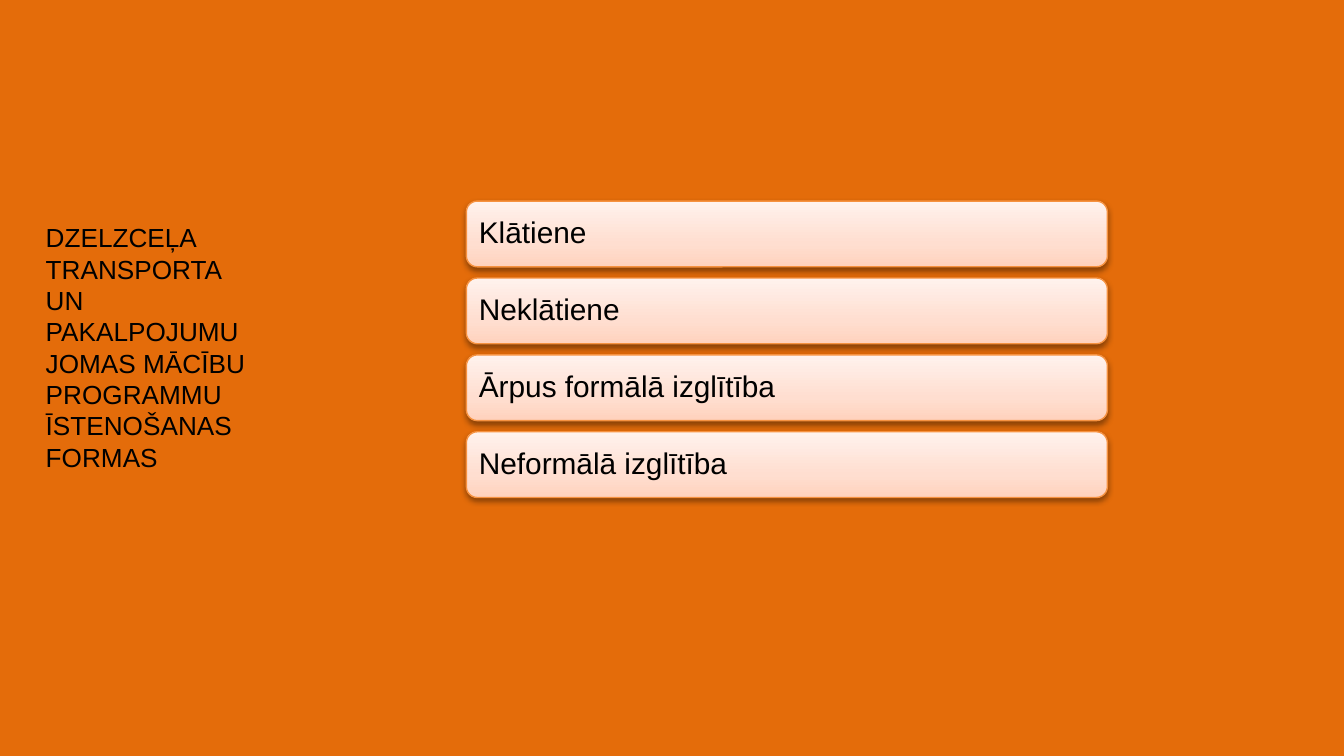
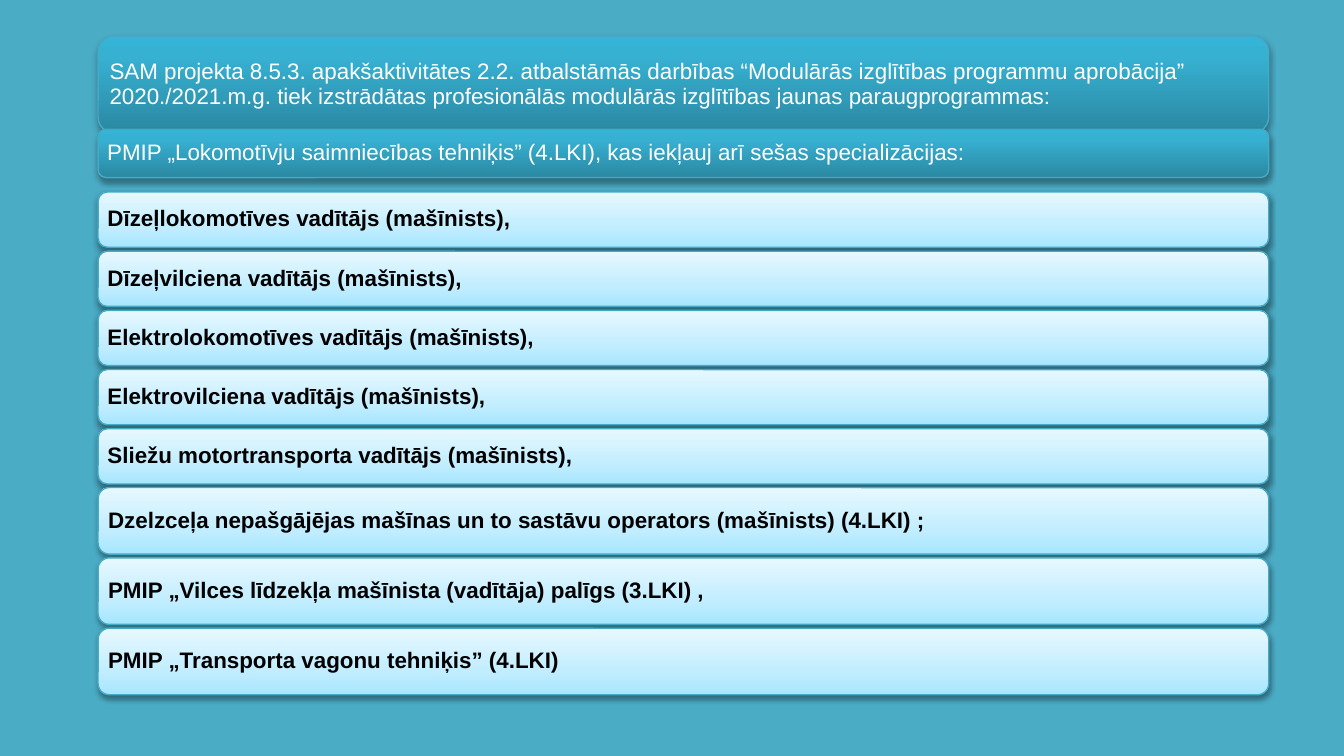
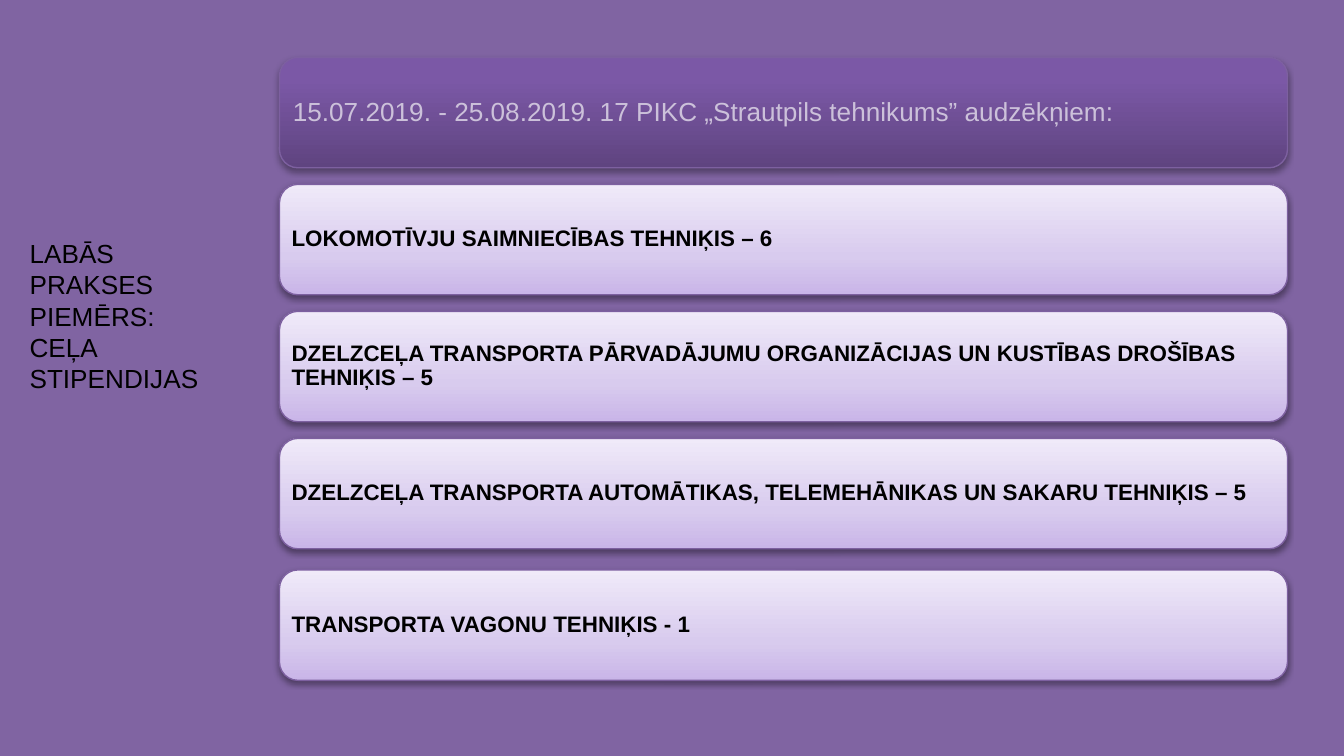
import copy
import pptx
import pptx.util
import pptx.dml.color
import pptx.enum.shapes
import pptx.enum.text
import pptx.oxml
import pptx.oxml.ns

Pt, Inches = pptx.util.Pt, pptx.util.Inches
LEFT = pptx.enum.text.PP_ALIGN.LEFT
MIDDLE = pptx.enum.text.MSO_ANCHOR.MIDDLE
ROUND = pptx.enum.shapes.MSO_SHAPE.ROUNDED_RECTANGLE
SIDES = ("margin_left", "margin_right", "margin_top", "margin_bottom")

deck = pptx.Presentation()
deck.slide_width, deck.slide_height = Inches(10), Inches(5.625)
COL, ROW = deck.slide_width / 100, deck.slide_height / 100


def rgb(code):
    return pptx.dml.color.RGBColor.from_string(code)


def write(frame, text, hue, frame_set, para_set, font_set):
    """Fill a text frame and apply the format values at each level."""
    frame.text = text
    base = {"word_wrap": True, "vertical_anchor": MIDDLE,
            "auto_size": pptx.enum.text.MSO_AUTO_SIZE.NONE}
    for key, val in {**base, **frame_set}.items():
        setattr(frame, key, val)
    for para in frame.paragraphs:
        for key, val in {"alignment": LEFT, **para_set}.items():
            setattr(para, key, val)
        for key, val in {"name": "Arial", **font_set}.items():
            setattr(para.font, key, val)
        para.font.color.rgb = rgb(hue)


# Each look: gradient stops from the bottom up, text colour, bold, shadow alpha and distance
def_stops = (0, 0.35, 1)
head_stops = (0, 0.8, 1)
soft = ("000000", 38, 1.6)
deep = (35, 1.8)
LOOKS = {
    "peach": (def_stops, ("FFD2BD", "FFDED0", "FFF2ED"), "000000", False, 38, 1.6),
    "sky": (def_stops, ("A7E6FF", "C1EDFF", "E7F8FF"), "000000", True, 38, 1.6),
    "teal": (head_stops, ("2A88A2", "37B1D2", "34B4D6"), "FFFFFF", False, 35, 1.8),
    "lilac": (def_stops, ("C9B5E8", "D8CBEE", "F0EAF9"), "000000", True, 38, 1.6),
    "plum": (head_stops, ("5F4480", "7B58A6", "7C57A8"), "CCC1DA", False, 35, 1.8),
}

# Titles: text, left, top, width, height in grid units, and bottom margin in inches
# Stacks: look, text size, inset, first row, step, bar height, texts
SLIDES = [
    {"back": "E46C0A", "line": "F69240", "left": 34.7, "wide": 47.7,
     "title": ("DZELZCEĻA TRANSPORTA UN PAKALPOJUMU JOMAS MĀCĪBU "
               "PROGRAMMU ĪSTENOŠANAS FORMAS", 2.4, 27.4, 18, 45.2, 0.51),
     "stacks": [
         ("peach", 16, 0.07, 26.6, 10.17, 8.7,
          ["Klātiene", "Neklātiene", "Ārpus formālā izglītība",
           "Neformālā izglītība"])]},
    {"back": "4BACC6", "line": "46AAC5", "left": 7.3, "wide": 87.1,
     "stacks": [
         ("teal", 12, 0.05, 4.8, 0, 12.8,
          ["SAM projekta 8.5.3. apakšaktivitātes 2.2. atbalstāmās darbības "
           "“Modulārās izglītības programmu aprobācija” 2020./2021.m.g. tiek "
           "izstrādātas profesionālās modulārās izglītības jaunas "
           "paraugprogrammas:"]),
         ("teal", 12, 0.05, 17.1, 0, 6.4,
          ["PMIP „Lokomotīvju saimniecības tehniķis” (4.LKI), kas iekļauj "
           "arī sešas specializācijas:"]),
         ("sky", 12, 0.05, 25.4, 7.83, 7.3,
          ["Dīzeļlokomotīves vadītājs (mašīnists),",
           "Dīzeļvilciena vadītājs (mašīnists),",
           "Elektrolokomotīves vadītājs (mašīnists),",
           "Elektrovilciena vadītājs (mašīnists),",
           "Sliežu motortransporta vadītājs (mašīnists),"]),
         ("sky", 12, 0.05, 64.5, 9.3, 8.8,
          ["Dzelzceļa nepašgājējas mašīnas un to sastāvu operators "
           "(mašīnists) (4.LKI) ;",
           "PMIP „Vilces līdzekļa mašīnista (vadītāja) palīgs (3.LKI) ,",
           "PMIP „Transporta vagonu tehniķis” (4.LKI)"])]},
    {"back": "8064A2", "line": "7D60A0", "left": 20.8, "wide": 75,
     "title": ("LABĀS PRAKSES PIEMĒRS:\nCEĻA STIPENDIJAS",
               1.2, 30.4, 16.7, 26.8, 0.28),
     "stacks": [
         ("plum", 14, 0.06, 7.6, 0, 14.6,
          ["15.07.2019. - 25.08.2019. 17 PIKC „Strautpils tehnikums” "
           "audzēkņiem:"]),
         ("lilac", 12, 0.05, 24.4, 16.8, 14.6,
          ["LOKOMOTĪVJU SAIMNIECĪBAS TEHNIĶIS – 6",
           "DZELZCEĻA TRANSPORTA PĀRVADĀJUMU ORGANIZĀCIJAS UN KUSTĪBAS "
           "DROŠĪBAS TEHNIĶIS – 5",
           "DZELZCEĻA TRANSPORTA AUTOMĀTIKAS, TELEMEHĀNIKAS UN SAKARU "
           "TEHNIĶIS – 5"]),
         ("lilac", 12, 0.05, 75.4, 0, 14.6,
          ["TRANSPORTA VAGONU TEHNIĶIS - 1"])]},
]

for plan in SLIDES:
    slide = deck.slides.add_slide(deck.slide_layouts[5 if "title" in plan else 6])
    slide.background.fill.solid()
    slide.background.fill.fore_color.rgb = rgb(plan["back"])

    if "title" in plan:
        text, left, top, wide, high, foot = plan["title"]
        title = slide.shapes.title
        place = {"left": left * COL, "top": top * ROW,
                 "width": wide * COL, "height": high * ROW}
        for key, val in place.items():
            setattr(title, key, int(val))
        write(title.text_frame, text, "000000",
              {"margin_bottom": Inches(foot)}, {}, {"size": Pt(14)})

    for look, size, inset, first, step, high, texts in plan["stacks"]:
        spots, hues, ink, bold, alpha, dist = LOOKS[look]
        for num, text in enumerate(texts):
            bar = slide.shapes.add_shape(
                ROUND, int(plan["left"] * COL), int((first + num * step) * ROW),
                int(plan["wide"] * COL), int(high * ROW))
            bar.line.color.rgb = rgb(plan["line"])
            bar.line.width = Pt(0.75)

            bar.fill.gradient()
            bar.fill.gradient_angle = 90
            stops = bar.element.spPr.find(".//" + pptx.oxml.ns.qn("a:gsLst"))
            stops.append(copy.deepcopy(stops[0]))
            for stop, spot, hue in zip(bar.fill.gradient_stops, spots, hues):
                stop.position = spot
                stop.color.rgb = rgb(hue)

            bar.shadow.inherit = False
            glow = bar.element.spPr.find(pptx.oxml.ns.qn("a:effectLst"))
            glow.append(pptx.oxml.parse_xml(
                f'<a:outerShdw {pptx.oxml.ns.nsdecls("a")} blurRad="{Pt(3.1)}" '
                f'dist="{Pt(dist)}" dir="5400000" rotWithShape="0">'
                f'<a:srgbClr val="000000"><a:alpha val="{alpha * 1000}"/>'
                '</a:srgbClr></a:outerShdw>'))

            write(bar.text_frame, text, ink, dict.fromkeys(SIDES, Inches(inset)),
                  {"line_spacing": 0.9}, {"size": Pt(size), "bold": bold})

deck.save("out.pptx")
